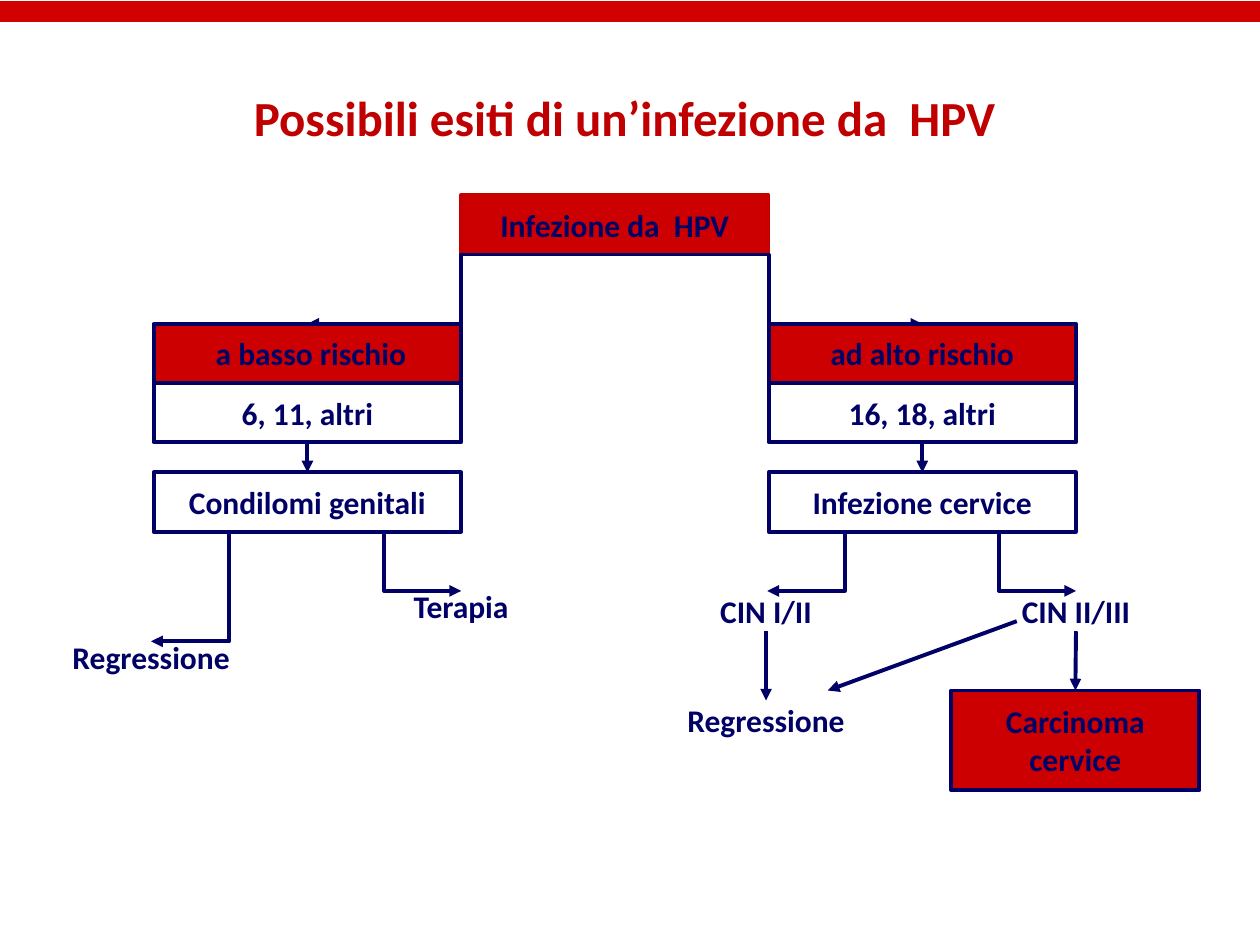
from dataclasses import dataclass
from typing import Optional

from lxml import etree
from pptx import Presentation
from pptx.dml.color import RGBColor
from pptx.enum import shapes, text
from pptx.oxml import ns
from pptx.util import Inches, Pt

NAVY = RGBColor(0x00, 0x00, 0x66)
RED = RGBColor(0xCC, 0x00, 0x00)
EDGE = RGBColor(0xC4, 0x00, 0x00)
BAR = RGBColor(0xD2, 0x00, 0x00)
TITLE = RGBColor(0xC0, 0x00, 0x00)
WHITE = RGBColor(0xFF, 0xFF, 0xFF)

WIDE, TALL = 2.44, 0.47
LEFT, MID, RIGHT = 1.22, 3.66, 6.1
TOP, RISK, TYPE, SITE = 1.55, 2.57, 3.04, 3.75
BASE = SITE + TALL
FORK = 4.69
ELBOW = shapes.MSO_CONNECTOR.ELBOW
LINE = shapes.MSO_CONNECTOR.STRAIGHT


@dataclass
class Node:
    key: str
    words: str
    x: float
    y: float
    w: float = WIDE
    h: float = TALL
    fill: Optional[RGBColor] = None
    edge: Optional[RGBColor] = NAVY
    gap: float = 11.2


@dataclass
class Link:
    start: tuple
    end: tuple
    kind: int = LINE
    color: RGBColor = NAVY
    width: float = 2.25
    arrow: bool = True


NODES = [
    Node("root", "Infezione da  HPV", MID, TOP, fill=RED, edge=EDGE),
    Node("low", " a basso rischio", LEFT, RISK, fill=RED),
    Node("high", "ad alto rischio", RIGHT, RISK, fill=RED),
    Node("few", "6, 11, altri", LEFT, TYPE, fill=WHITE),
    Node("many", "16, 18, altri", RIGHT, TYPE, fill=WHITE),
    Node("warts", "Condilomi genitali", LEFT, SITE, fill=WHITE),
    Node("cervix", "Infezione cervice", RIGHT, SITE, fill=WHITE),
    Node("cure", "Terapia", 2.44, FORK, h=0.24, edge=None),
    Node("heal", "Regressione", -0.02, 5.09, h=0.24, edge=None),
    Node("mild", "CIN I/II", 4.86, FORK, h=0.32, edge=None),
    Node("grave", "CIN II/III", 7.32, FORK, h=0.32, edge=None),
    Node("clear", "Regressione", 4.86, 5.56, h=0.31, edge=None),
    Node("cancer", "Carcinoma\ncervice", 7.55, 5.48, 1.97, 0.79, RED, gap=0),
]

LINKS = [
    Link((4.88, TOP + TALL), (2.44, RISK), ELBOW),
    Link((4.88, TOP + TALL), (7.32, RISK), ELBOW),
    Link((2.44, BASE), (1.2, 5.09), ELBOW),
    Link((2.44, BASE), (3.66, FORK), ELBOW),
    Link((7.32, BASE), (6.09, FORK), ELBOW),
    Link((7.32, BASE), (8.54, FORK), ELBOW),
    Link((8.07, 4.93), (6.57, 5.48)),
    Link((0, 0.09), (10, 0.09), color=BAR, width=12, arrow=False),
]

JOINS = [("few", "warts"), ("many", "cervix"), ("mild", "clear"), ("grave", "cancer")]


def style(frame, words: str, size: float, color: RGBColor, gap: float) -> None:
    frame.text = words
    looks = {"word_wrap": True, "vertical_anchor": text.MSO_ANCHOR.MIDDLE,
             "auto_size": text.MSO_AUTO_SIZE.NONE}
    for name, value in looks.items():
        setattr(frame, name, value)
    for para in frame.paragraphs:
        para.alignment = text.PP_ALIGN.CENTER
        para.space_before = Pt(gap)
        for run in para.runs:
            for name, value in {"name": "Calibri", "size": Pt(size), "bold": True}.items():
                setattr(run.font, name, value)
            run.font.color.rgb = color


def draw(slide, node: Node):
    spot = [Inches(n) for n in (node.x, node.y, node.w, node.h)]
    if node.edge is None:
        shape = slide.shapes.add_textbox(*spot)
    else:
        shape = slide.shapes.add_shape(shapes.MSO_SHAPE.RECTANGLE, *spot)
        shape.shadow.inherit = False
        shape.fill.solid()
        shape.fill.fore_color.rgb = node.fill
        shape.line.color.rgb = node.edge
        shape.line.width = Pt(2.25)
    style(shape.text_frame, node.words, 18, NAVY, node.gap)
    return shape


def connect(slide, link: Link):
    ends = [Inches(n) for n in (*link.start, *link.end)]
    wire = slide.shapes.add_connector(link.kind, *ends)
    wire.line.color.rgb = link.color
    wire.line.width = Pt(link.width)
    if link.arrow:
        tail = etree.SubElement(wire.line._get_or_add_ln(), ns.qn("a:tailEnd"))
        tail.set("type", "triangle")
    etree.SubElement(wire.element.spPr, ns.qn("a:effectLst"))
    return wire


def main() -> None:
    deck = Presentation()
    deck.slide_width, deck.slide_height = Inches(10), Inches(7.5)
    slide = deck.slides.add_slide(deck.slide_layouts[5])
    title = slide.shapes.title
    place = {"left": 0.5, "top": 0.3, "width": 9, "height": 1.25}
    for name, value in place.items():
        setattr(title, name, Inches(value))
    style(title.text_frame, "Possibili esiti di un’infezione da  HPV ", 28, TITLE, 0)

    made = {node.key: draw(slide, node) for node in NODES}
    for link in LINKS:
        connect(slide, link)
    for start, end in JOINS:
        wire = connect(slide, Link((0, 0), (1, 1)))
        wire.begin_connect(made[start], 2)
        wire.end_connect(made[end], 0)
    for key in ("low", "high", "cancer"):
        box = made[key].element
        box.getparent().append(box)

    deck.save("out.pptx")


if __name__ == "__main__":
    main()
